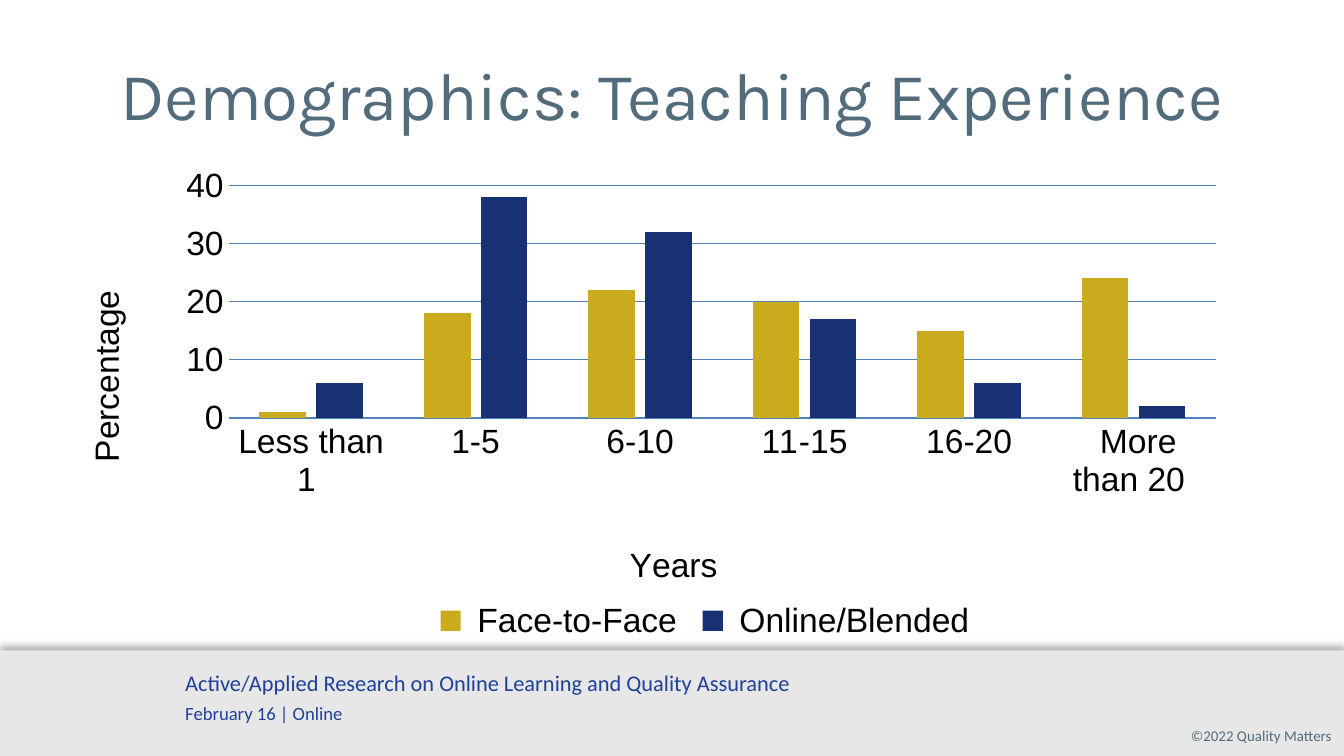
from lxml import etree
from pptx import Presentation
from pptx.chart.data import CategoryChartData
from pptx.dml.color import RGBColor
from pptx.enum.chart import XL_CHART_TYPE as ChartType
from pptx.enum.chart import XL_LEGEND_POSITION as LegendPosition
from pptx.enum.chart import XL_TICK_MARK as TickMark
from pptx.enum.shapes import MSO_SHAPE as ShapeType
from pptx.enum.text import MSO_ANCHOR as Anchor
from pptx.enum.text import PP_ALIGN as Align
from pptx.oxml.ns import qn
from pptx.util import Inches, Pt

WHITE = RGBColor(0xFF, 0xFF, 0xFF)
BLACK = RGBColor(0, 0, 0)
BAND_GRAY = RGBColor(0xE7, 0xE7, 0xE7)
SLATE = RGBColor(0x52, 0x6C, 0x7C)
FOOTER_BLUE = RGBColor(0x1F, 0x41, 0x9A)
GRID_BLUE = RGBColor(0x4F, 0x81, 0xBD)
GOLD = RGBColor(0xCA, 0xAB, 0x1E)
NAVY = RGBColor(0x17, 0x31, 0x73)

SLIDE_WIDTH = 10
SLIDE_HEIGHT = SLIDE_WIDTH * 9 / 16
FOOTER_TOP = 4.84

CATEGORIES = ["Less than 1 ", " 1-5 ", " 6-10 ", " 11-15 ", "16-20", " More than 20 "]
SERIES = [
    (" Face-to-Face", [1, 18, 22, 20, 15, 24], GOLD),
    (" Online/Blended", [6, 38, 32, 17, 6, 2], NAVY),
]


def style_font(font, name, size, color):
    font.name = name
    font.size = Pt(size)
    font.bold = False
    font.color.rgb = color


def add_text(slide, box, lines, font_name, color, align=Align.LEFT, anchor=Anchor.TOP, right=0.1):
    shape = slide.shapes.add_textbox(*map(Inches, box))
    frame = shape.text_frame
    frame.word_wrap = True
    frame.vertical_anchor = anchor
    frame.margin_right = Inches(right)
    for index, (text, size) in enumerate(lines):
        paragraph = frame.add_paragraph() if index else frame.paragraphs[0]
        paragraph.alignment = align
        if index:
            paragraph.space_before = Pt(3)
        run = paragraph.add_run()
        run.text = text
        style_font(run.font, font_name, size, color)


def add_upward_shadow(shape):
    effects = etree.SubElement(shape.element.spPr, qn("a:effectLst"))
    shadow = etree.SubElement(
        effects, qn("a:outerShdw"), blurRad=str(Pt(4)), dist=str(Pt(3)),
        dir=str(270 * 60000), rotWithShape="0")
    color = etree.SubElement(shadow, qn("a:srgbClr"), val="000000")
    etree.SubElement(color, qn("a:alpha"), val="29000")


def add_footer(slide, box):
    left, top, width, height = box
    band = slide.shapes.add_shape(ShapeType.RECTANGLE, *map(Inches, box))
    band.fill.solid()
    band.fill.fore_color.rgb = BAND_GRAY
    band.line.fill.background()
    add_upward_shadow(band)
    add_text(slide, (left + width - 1.68, top + 0.52, 1.59, 0.24),
             [("©2022 Quality Matters", 8)], "Calibri", SLATE, Align.RIGHT, right=0)
    add_text(slide, (left + 1.28, top + 0.09, 6.39, 0.51),
             [("Active/Applied Research on Online Learning and Quality Assurance", 12),
              ("February 16 | Online", 10)], "Calibri", FOOTER_BLUE)


def set_layout(parent, index, **settings):
    for old in parent.findall(qn("c:layout")):
        parent.remove(old)
    layout = etree.Element(qn("c:layout"))
    manual = etree.SubElement(layout, qn("c:manualLayout"))
    for name, value in settings.items():
        etree.SubElement(manual, qn(f"c:{name}"), val=str(value))
    parent.insert(index, layout)


def style_axis(axis, title, x, y):
    axis.major_tick_mark = axis.minor_tick_mark = TickMark.NONE
    style_font(axis.tick_labels.font, "Arial", 18, BLACK)
    run = axis.axis_title.text_frame.paragraphs[0].add_run()
    run.text = title
    style_font(run.font, "Arial", 18, BLACK)
    set_layout(axis.axis_title._element, 1, xMode="edge", yMode="edge", x=x, y=y)


def style_line(line):
    line.color.rgb = GRID_BLUE
    line.width = Pt(0.75)


def add_experience_chart(slide, box):
    data = CategoryChartData(number_format="#,##0")
    data.categories = CATEGORIES
    for name, values, _ in SERIES:
        data.add_series(name, values)
    chart = slide.shapes.add_chart(ChartType.COLUMN_CLUSTERED, *map(Inches, box), data).chart
    style_font(chart.font, "Arial", 10, BLACK)
    chart.has_title = False

    plot = chart.plots[0]
    plot.gap_width = 130
    plot.overlap = -22
    plot.vary_by_categories = False
    for series, (_, _, color) in zip(plot.series, SERIES):
        series.format.fill.solid()
        series.format.fill.fore_color.rgb = color
        series.invert_if_negative = False

    style_axis(chart.category_axis, "Years", 0.47, 0.77)
    style_line(chart.category_axis.format.line)
    value_axis = chart.value_axis
    style_axis(value_axis, "Percentage", 0, 0.26)
    value_axis.minimum_scale = 0
    value_axis.maximum_scale = 40
    value_axis.major_unit = 10
    value_axis.tick_labels.number_format = "#,##0"
    value_axis.tick_labels.number_format_is_linked = False
    value_axis.format.line.fill.background()
    style_line(value_axis.major_gridlines.format.line)

    chart.has_legend = True
    chart.legend.position = LegendPosition.BOTTOM
    chart.legend.include_in_layout = False
    style_font(chart.legend.font, "Arial", 18, BLACK)
    set_layout(chart.legend._element, 1, xMode="edge", yMode="edge",
               x=0.3, y=0.89, w=0.48, h=0.1)
    plot_area = chart.element.find(f".//{qn('c:plotArea')}")
    set_layout(plot_area, 0, layoutTarget="inner", xMode="edge", yMode="edge",
               x=0.13, y=0.06, w=0.85, h=0.47)


def main():
    presentation = Presentation()
    presentation.slide_width = Inches(SLIDE_WIDTH)
    presentation.slide_height = Inches(SLIDE_HEIGHT)
    slide = presentation.slides.add_slide(presentation.slide_layouts[6])
    slide.background.fill.solid()
    slide.background.fill.fore_color.rgb = WHITE
    add_footer(slide, (0, FOOTER_TOP, SLIDE_WIDTH, SLIDE_HEIGHT - FOOTER_TOP))
    add_text(slide, (0.5, 0.23, 9, 0.94), [("Demographics: Teaching Experience", 36)],
             "Karla", SLATE, Align.CENTER, Anchor.MIDDLE)
    add_experience_chart(slide, (0.58, 1.16, 8.64, 3.68))
    presentation.save("out.pptx")


if __name__ == "__main__":
    main()
